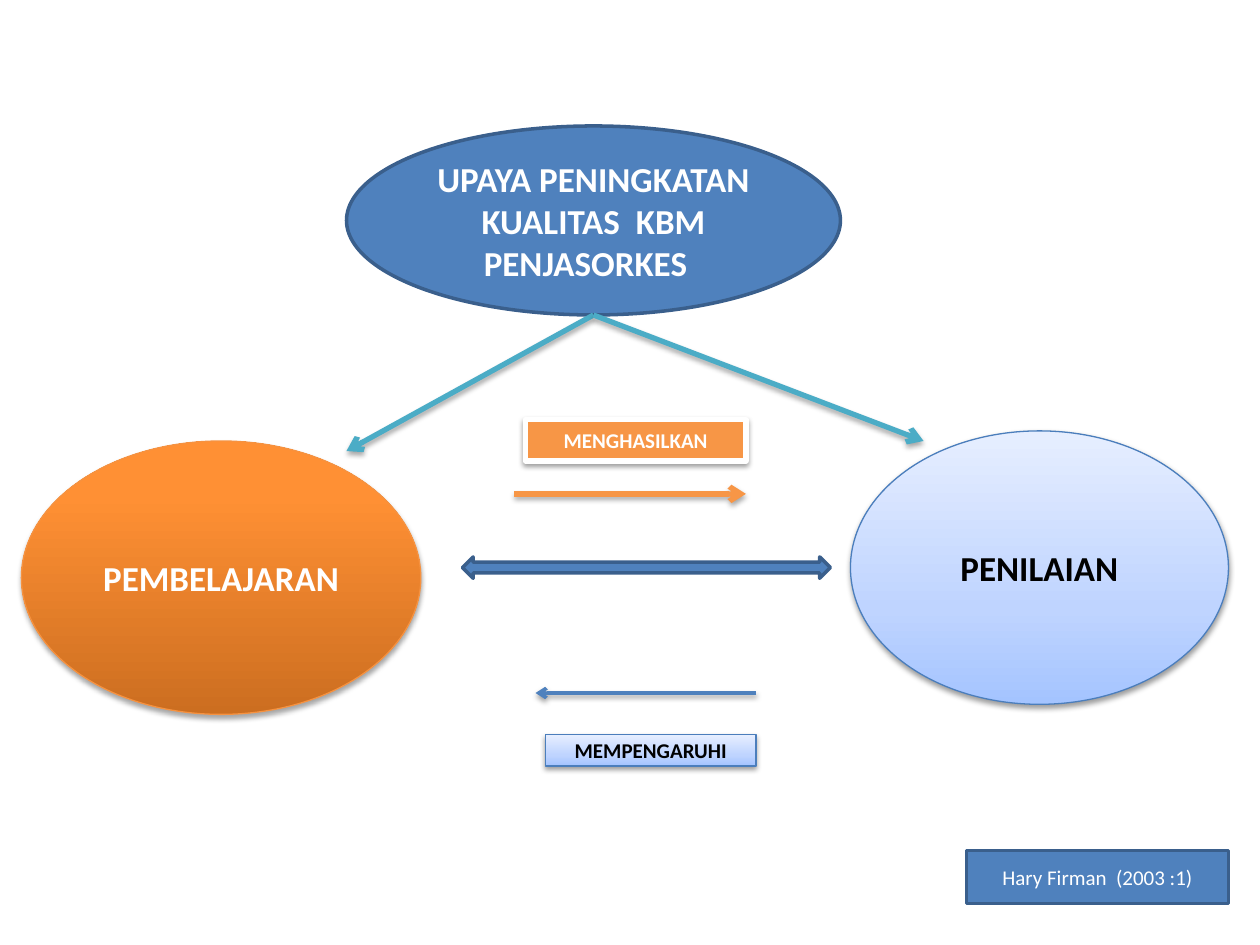
from dataclasses import dataclass

from lxml.etree import SubElement
from pptx import Presentation
from pptx.dml.color import RGBColor
from pptx.enum.shapes import MSO_CONNECTOR, MSO_SHAPE
from pptx.enum.text import MSO_ANCHOR, PP_ALIGN
from pptx.oxml import parse_xml
from pptx.oxml.ns import nsdecls, qn
from pptx.util import Inches, Pt


@dataclass(frozen=True)
class Theme:
    font: str = "Calibri"
    heading_size: int = 20
    label_size: int = 12
    white: str = "FFFFFF"
    black: str = "000000"
    blue: str = "4F81BD"
    blue_edge: str = "3A5F8C"
    pale_edge: str = "4B7EBC"
    orange: str = "F79646"
    orange_edge: str = "F69240"
    teal: str = "4BACC6"
    pale_gradient: tuple = ((0, "A4C4FF"), (35, "BFD4FF"), (100, "E6EEFF"))
    orange_gradient: tuple = ((0, "CC6E20"), (80, "FF9034"), (100, "FF9136"))
    soft_shadow: tuple = (38, 1.6)  # opacity in percent, distance in points
    deep_shadow: tuple = (35, 1.8)


theme = Theme()


def finish(item, line, width, fill=None, shadow=None):
    """Set fill, outline and shadow; a tuple of stops gives a bottom-to-top gradient."""
    properties = item._element.spPr
    if isinstance(fill, tuple):
        item.fill.gradient()
        stops = "".join(
            f'<a:gs pos="{position * 1000}"><a:srgbClr val="{color}"/></a:gs>'
            for position, color in fill)
        gradient = parse_xml(
            f'<a:gradFill {nsdecls("a")} rotWithShape="1"><a:gsLst>{stops}</a:gsLst>'
            '<a:lin ang="16200000" scaled="0"/></a:gradFill>')
        properties.replace(properties.find(qn("a:gradFill")), gradient)
    elif fill:
        item.fill.solid()
        item.fill.fore_color.rgb = RGBColor.from_string(fill)
    item.line.color.rgb = RGBColor.from_string(line)
    item.line.width = Pt(width)
    effects = SubElement(properties, qn("a:effectLst"))
    if shadow:
        opacity, distance = shadow
        effects.append(parse_xml(
            f'<a:outerShdw {nsdecls("a")} blurRad="{Pt(3.1)}" dist="{Pt(distance)}" '
            f'dir="5400000" rotWithShape="0"><a:srgbClr val="{theme.black}">'
            f'<a:alpha val="{opacity * 1000}"/></a:srgbClr></a:outerShdw>'))


def write_text(shape, text, size=theme.label_size, color=theme.white, bold=True):
    frame = shape.text_frame
    frame.word_wrap = True
    frame.vertical_anchor = MSO_ANCHOR.MIDDLE
    paragraph = frame.paragraphs[0]
    paragraph.alignment = PP_ALIGN.CENTER
    run = paragraph.add_run()
    run.text = text
    run.font.name = theme.font
    run.font.size = Pt(size)
    run.font.bold = bold
    run.font.color.rgb = RGBColor.from_string(color)


presentation = Presentation()
presentation.slide_width = Inches(10)
presentation.slide_height = Inches(7.5)
slide = presentation.slides.add_slide(presentation.slide_layouts[6])

heading = {"size": theme.heading_size}
blue_style = {"fill": theme.blue, "line": theme.blue_edge, "width": 2}
pale_style = {"fill": theme.pale_gradient, "line": theme.pale_edge, "width": 0.75,
              "shadow": theme.soft_shadow}
orange_style = {"fill": theme.orange_gradient, "line": theme.orange_edge, "width": 0.75,
                "shadow": theme.deep_shadow}
framed_style = {"fill": theme.orange, "line": theme.white, "width": 3,
                "shadow": theme.soft_shadow}

# Preset, left, top, width, height, style, text, text format
boxes = [
    (MSO_SHAPE.OVAL, 2.75, 1, 3.92, 1.5, blue_style,
     "UPAYA PENINGKATAN KUALITAS  KBM PENJASORKES  ", heading),
    (MSO_SHAPE.OVAL, 6.75, 3.42, 3, 2.17, pale_style,
     "PENILAIAN", {**heading, "color": theme.black}),
    (MSO_SHAPE.OVAL, 0.17, 3.5, 3.17, 2.17, orange_style, "PEMBELAJARAN", heading),
    (MSO_SHAPE.RECTANGLE, 4.17, 3.33, 1.75, 0.33, framed_style, "MENGHASILKAN", {}),
    (MSO_SHAPE.RECTANGLE, 4.33, 5.83, 1.67, 0.25, pale_style,
     "MEMPENGARUHI", {"color": theme.black}),
    (MSO_SHAPE.LEFT_RIGHT_ARROW, 3.67, 4.42, 2.92, 0.17, blue_style, "", {}),
    (MSO_SHAPE.RECTANGLE, 7.67, 6.75, 2.08, 0.42, blue_style,
     "Hary Firman  (2003 :1)", {"bold": False}),
]
for preset, left, top, width, height, style, text, text_format in boxes:
    shape = slide.shapes.add_shape(
        preset, Inches(left), Inches(top), Inches(width), Inches(height))
    finish(shape, **style)
    if text:
        write_text(shape, text, **text_format)

# Start, end, color, width, shadow
goal_bottom = (4.71, 2.5)
arrows = [
    ((4.08, 3.92), (5.92, 3.92), theme.orange, 3, theme.deep_shadow),
    ((6, 5.5), (4.25, 5.5), theme.blue, 2, theme.soft_shadow),
    (goal_bottom, (2.75, 3.58), theme.teal, 3, theme.deep_shadow),
    (goal_bottom, (7.33, 3.5), theme.teal, 3, theme.deep_shadow),
]
for start, end, color, width, shadow in arrows:
    arrow = slide.shapes.add_connector(
        MSO_CONNECTOR.STRAIGHT, *(Inches(value) for value in start + end))
    finish(arrow, color, width, shadow=shadow)
    SubElement(arrow.line._get_or_add_ln(), qn("a:tailEnd"), type="arrow")

presentation.save("out.pptx")
